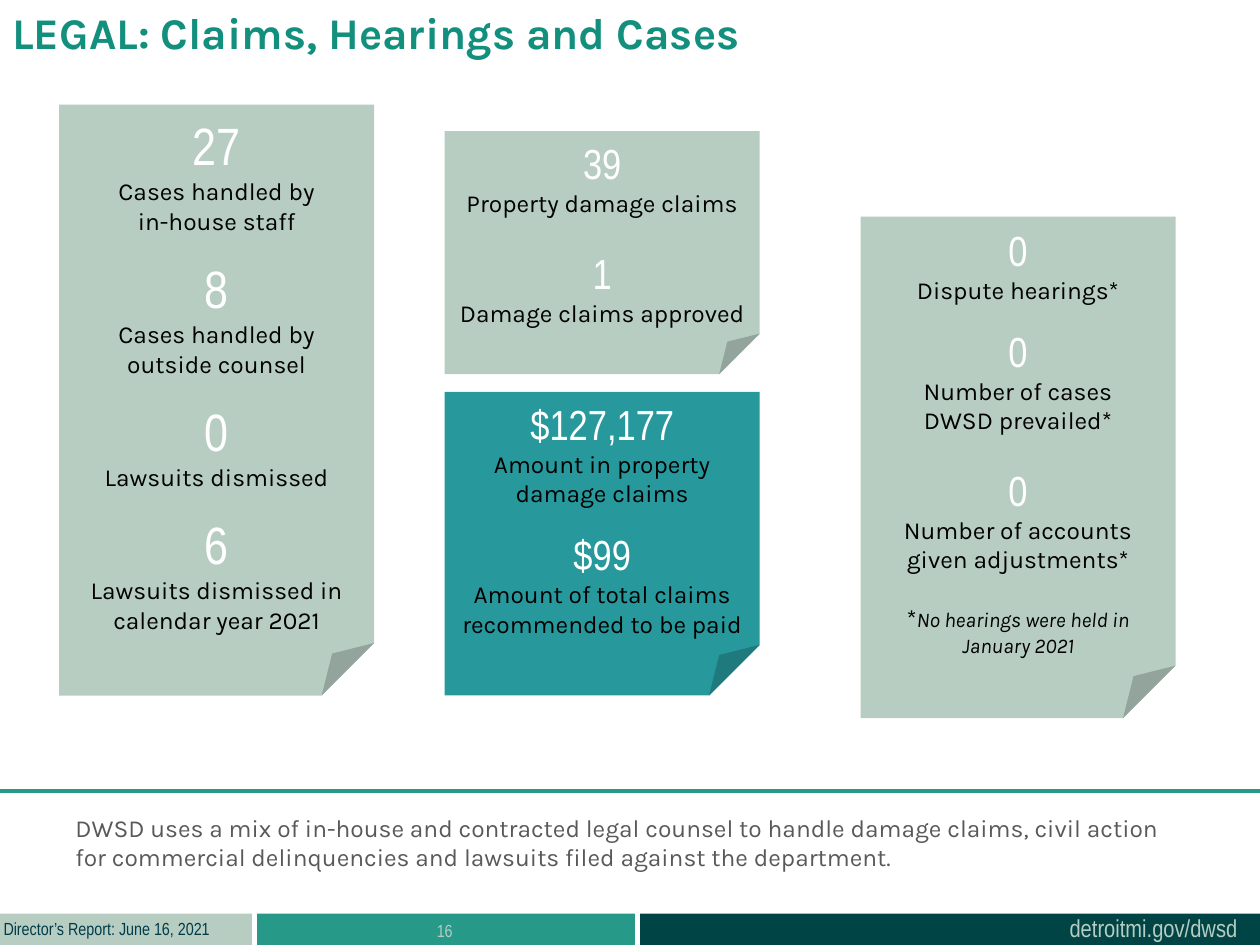
from dataclasses import dataclass

from lxml import etree
from pptx import Presentation
from pptx.dml.color import RGBColor
from pptx.enum.shapes import MSO_CONNECTOR, MSO_SHAPE
from pptx.enum.text import MSO_ANCHOR, PP_ALIGN
from pptx.oxml.ns import qn
from pptx.util import Inches, Pt

RECT, NOTE = MSO_SHAPE.RECTANGLE, MSO_SHAPE.FOLDED_CORNER
STRAIGHT = MSO_CONNECTOR.STRAIGHT
MIDDLE = MSO_ANCHOR.MIDDLE
LEFT, CENTER = PP_ALIGN.LEFT, PP_ALIGN.CENTER

COLORS = {
    "sage": "B7CDC2", "teal": "27999D", "green": "279989", "deep": "004445",
    "navy": "003B49", "title": "138F7E", "gray": "595959",
    "white": "FFFFFF", "black": "000000",
}
NARROW, KARLA = "Arial Narrow", "Karla"
CARD_W = 2.5
TIGHT, LOOSE = 12, 17  # points between the figures of a card


@dataclass
class Stat:
    value: str
    label: str
    gap: int = 0


@dataclass
class Card:
    left: float
    top: float
    height: float
    color: str
    size: int
    stats: list[Stat]


@dataclass
class Label:
    left: float
    top: float
    width: float
    height: float
    text: str
    size: int
    font: str
    color: str
    bold: bool = False
    wrap: bool = True
    align: PP_ALIGN = LEFT


BARS = [(2.04, 3, "green"), (5.08, 4.92, "deep"), (0, 2, "sage")]

LABELS = [
    Label(8.39, 7.2, 1.55, 0.34, "detroitmi.gov/dwsd", 14, NARROW, "sage", wrap=False),
    Label(-0.07, 7.24, 1.84, 0.27, "Director’s Report: June 16, 2021", 10, NARROW,
          "navy", wrap=False),
    Label(2.03, 7.25, 3, 0.4, "16", 10, NARROW, "sage", align=CENTER),
    Label(0, 0, 7.59, 0.77, "LEGAL: Claims, Hearings and Cases", 25, KARLA,
          "title", bold=True),
    Label(0.5, 6.4, 9.02, 0.57,
          "DWSD uses a mix of in-house and contracted legal counsel to handle "
          "damage claims, civil action for commercial delinquencies and lawsuits "
          "filed against the department.", 14, KARLA, "gray"),
]

CASES = Card(0.47, 0.83, 4.69, "sage", 30, [
    Stat("27", "Cases handled by\nin-house staff"),
    Stat("8", "Cases handled by\noutside counsel", TIGHT),
    Stat("0", "Lawsuits dismissed", TIGHT),
    Stat("6", "Lawsuits dismissed in calendar year 2021", TIGHT),
])
CLAIMS = Card(3.53, 1.04, 1.93, "sage", 24, [
    Stat("39", "Property damage claims"),
    Stat("1", "Damage claims approved", LOOSE),
])
AMOUNTS = Card(3.53, 3.11, 2.41, "teal", 24, [
    Stat("$127,177", "Amount in property\ndamage claims"),
    Stat("$99", "Amount of total claims recommended to be paid", TIGHT),
])
HEARINGS = Card(6.83, 1.72, 3.98, "sage", 24, [
    Stat("0", "Dispute hearings*"),
    Stat("0", "Number of cases\nDWSD prevailed*", TIGHT),
    Stat("0", "Number of accounts\ngiven adjustments*", LOOSE),
])


def rgb(name: str) -> RGBColor:
    return RGBColor.from_string(COLORS[name])


def style(para, size: int, font: str, color: str, align=CENTER, bold=False) -> None:
    para.alignment = align
    para.font.size = Pt(size)
    para.font.name = font
    para.font.bold = bold
    para.font.color.rgb = rgb(color)


def add_block(slide, kind, left: float, top: float, width: float, height: float,
              color: str):
    shape = slide.shapes.add_shape(
        kind, Inches(left), Inches(top), Inches(width), Inches(height))
    shape.shadow.inherit = False
    shape.fill.solid()
    shape.fill.fore_color.rgb = rgb(color)
    shape.line.fill.background()
    return shape


def add_label(slide, item: Label) -> None:
    box = slide.shapes.add_textbox(
        Inches(item.left), Inches(item.top), Inches(item.width), Inches(item.height))
    box.text_frame.word_wrap = item.wrap
    para = box.text_frame.paragraphs[0]
    para.text = item.text
    style(para, item.size, item.font, item.color, item.align, item.bold)


def add_card(slide, card: Card):
    frame = add_block(slide, NOTE, card.left, card.top, CARD_W, card.height,
                      card.color).text_frame
    frame.word_wrap = True
    frame.vertical_anchor = MIDDLE
    for i, stat in enumerate(card.stats):
        value = frame.add_paragraph() if i else frame.paragraphs[0]
        value.text = stat.value
        if stat.gap:
            value.space_before = Pt(stat.gap)
        style(value, card.size, NARROW, "white")
        label = frame.add_paragraph()
        label.text = stat.label
        style(label, 14, KARLA, "black")
    return frame


def add_footnote(frame) -> None:
    para = frame.add_paragraph()
    para.space_before = Pt(LOOSE)
    style(para, 14, KARLA, "black")
    para.add_run().text = "*"
    note = para.add_run()
    note.text = "No hearings were held in January 2021"
    note.font.size = Pt(12)
    note.font.italic = True


def add_rule(slide, top: float) -> None:
    rule = slide.shapes.add_connector(
        STRAIGHT, Inches(10), Inches(top), Inches(0), Inches(top))
    rule.line.color.rgb = rgb("green")
    rule.line.width = Pt(2.25)
    etree.SubElement(rule._element.spPr, qn("a:effectLst"))


def main() -> None:
    deck = Presentation()
    deck.slide_width, deck.slide_height = Inches(10), Inches(7.5)
    slide = deck.slides.add_slide(deck.slide_layouts[6])

    # Footer bars, then the texts
    for left, width, color in BARS:
        add_block(slide, RECT, left, 7.25, width, 0.25, color)
    for item in LABELS:
        add_label(slide, item)

    # Cards of figures
    for card in (CLAIMS, AMOUNTS, CASES):
        add_card(slide, card)
    add_footnote(add_card(slide, HEARINGS))

    # Rule above the summary
    add_rule(slide, 6.28)
    deck.save("out.pptx")


if __name__ == "__main__":
    main()
